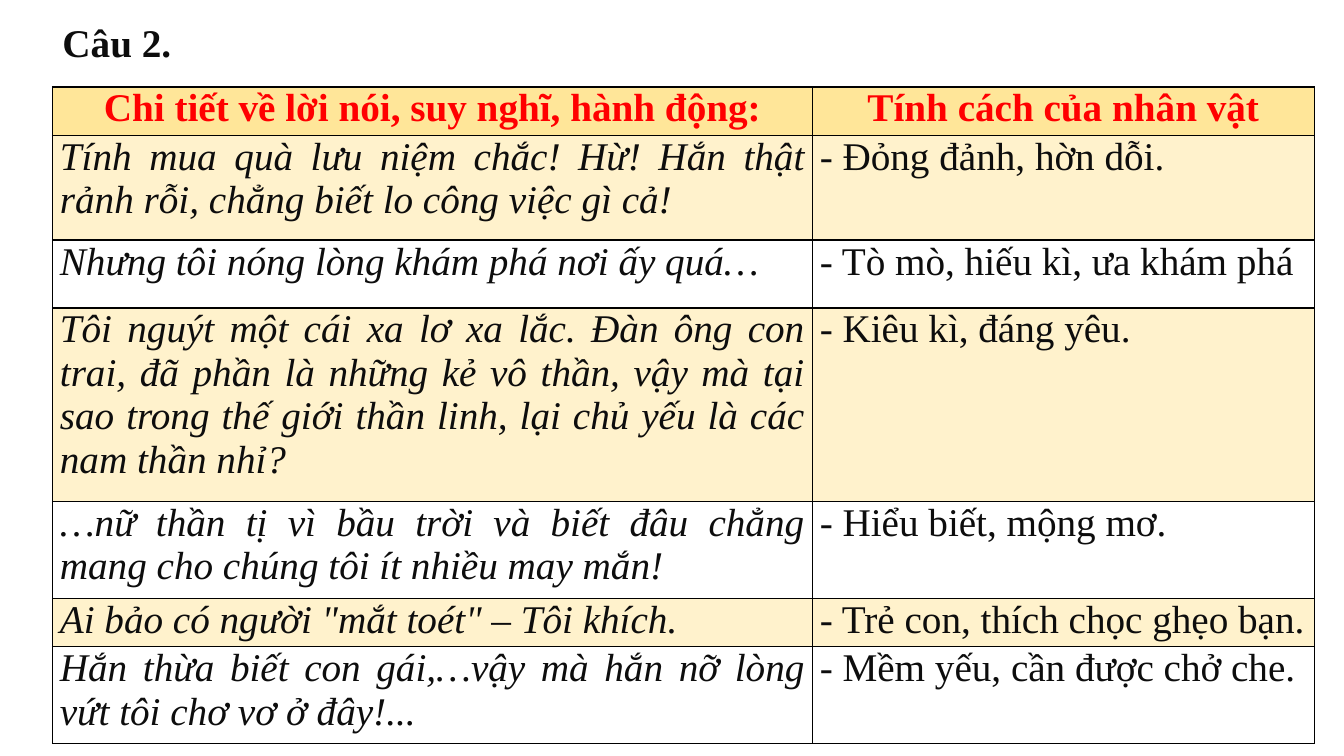
from dataclasses import dataclass

from lxml import etree
from pptx import Presentation
from pptx import util as u
from pptx.dml.color import RGBColor
from pptx.enum import text
from pptx.oxml import ns

FONT = "Times New Roman"
FONT_SIZE = u.Pt(28)
INK = RGBColor(0x0D, 0x0D, 0x0D)
RED = RGBColor(0xFF, 0x00, 0x00)
BLACK = RGBColor(0x00, 0x00, 0x00)
GOLD = RGBColor(0xFF, 0xE6, 0x99)
CREAM = RGBColor(0xFF, 0xF2, 0xCC)

LEFT = u.Cm(1.32)
COLUMN_WIDTHS = (u.Cm(19.15), u.Cm(12.65))
CELL_INSET = u.Cm(0.19)


@dataclass
class Row:
    height: float  # centimetres
    detail: str
    trait: str


ROWS = [
    Row(1.22, "Chi tiết về lời nói, suy nghĩ, hành động:", "Tính cách của nhân vật"),
    Row(2.64, "Tính mua quà lưu niệm chắc! Hừ! Hắn thật rảnh rỗi, chẳng biết lo "
              "công việc gì cả!", "- Đỏng đảnh, hờn dỗi."),
    Row(1.71, "Nhưng tôi nóng lòng khám phá nơi ấy quá…",
        "- Tò mò, hiếu kì, ưa khám phá"),
    Row(4.88, "Tôi nguýt một cái xa lơ xa lắc. Đàn ông con trai, đã phần là những "
              "kẻ vô thần, vậy mà tại sao trong thế giới thần linh, lại chủ yếu là "
              "các nam thần nhỉ?", "- Kiêu kì, đáng yêu."),
    Row(2.44, "…nữ thần tị vì bầu trời và biết đâu chẳng mang cho chúng tôi ít "
              "nhiều may mắn!", "- Hiểu biết, mộng mơ."),
    Row(1.22, 'Ai bảo có người "mắt toét" – Tôi khích.',
        "- Trẻ con, thích chọc ghẹo bạn."),
    Row(2.44, "Hắn thừa biết con gái,…vậy mà hắn nỡ lòng vứt tôi chơ vơ ở đây!...",
        "- Mềm yếu, cần được chở che."),
]


def format_text(frame, color: RGBColor, align, bold: bool = False,
                italic: bool = False) -> None:
    para = frame.paragraphs[0]
    para.alignment = align
    for span in para.runs:
        span.font.name = FONT
        span.font.size = FONT_SIZE
        span.font.color.rgb = color
        span.font.bold = bold
        span.font.italic = italic


def add_borders(cell) -> None:
    """Border elements must come before the cell's fill."""
    properties = cell._tc.get_or_add_tcPr()
    for position, side in enumerate(("lnL", "lnR", "lnT", "lnB")):
        line = etree.Element(ns.qn(f"a:{side}"), w=str(u.Pt(1)))
        fill = etree.SubElement(line, ns.qn("a:solidFill"))
        etree.SubElement(fill, ns.qn("a:srgbClr"), val=str(BLACK))
        properties.insert(position, line)


def fill_cell(cell, wording: str, row_number: int, column_number: int) -> None:
    cell.margin_left = cell.margin_right = CELL_INSET
    cell.margin_top = cell.margin_bottom = 0
    cell.text_frame.text = wording
    if row_number == 0:
        format_text(cell.text_frame, RED, text.PP_ALIGN.CENTER, bold=True)
    else:
        format_text(cell.text_frame, INK, text.PP_ALIGN.JUSTIFY,
                    italic=column_number == 0)
    if row_number % 2 or row_number == 0:
        cell.fill.solid()
        cell.fill.fore_color.rgb = CREAM if row_number else GOLD
    else:
        cell.fill.background()
    add_borders(cell)


def add_title(page) -> None:
    box = page.shapes.title
    box.left, box.top, box.width, box.height = LEFT, u.Cm(0.33), u.Cm(3.53), u.Cm(1.45)
    frame = box.text_frame
    frame.text = "Câu 2."
    frame.word_wrap = False
    frame.auto_size = text.MSO_AUTO_SIZE.NONE
    frame.vertical_anchor = text.MSO_ANCHOR.TOP
    format_text(frame, INK, text.PP_ALIGN.LEFT, bold=True)


def add_trait_table(page) -> None:
    heights = [u.Cm(row.height) for row in ROWS]
    table = page.shapes.add_table(len(ROWS), len(COLUMN_WIDTHS), LEFT, u.Cm(2.19),
                                  sum(COLUMN_WIDTHS), sum(heights)).table
    table.first_row = table.horz_banding = False
    for column, width in zip(table.columns, COLUMN_WIDTHS):
        column.width = width
    for row_number, row in enumerate(ROWS):
        table.rows[row_number].height = heights[row_number]
        for column_number, wording in enumerate((row.detail, row.trait)):
            fill_cell(table.cell(row_number, column_number), wording,
                      row_number, column_number)


def main() -> None:
    deck = Presentation()
    deck.slide_width, deck.slide_height = u.Cm(33.87), u.Cm(19.05)
    page = deck.slides.add_slide(deck.slide_layouts[5])  # title only
    add_title(page)
    add_trait_table(page)
    deck.save("out.pptx")


if __name__ == "__main__":
    main()
